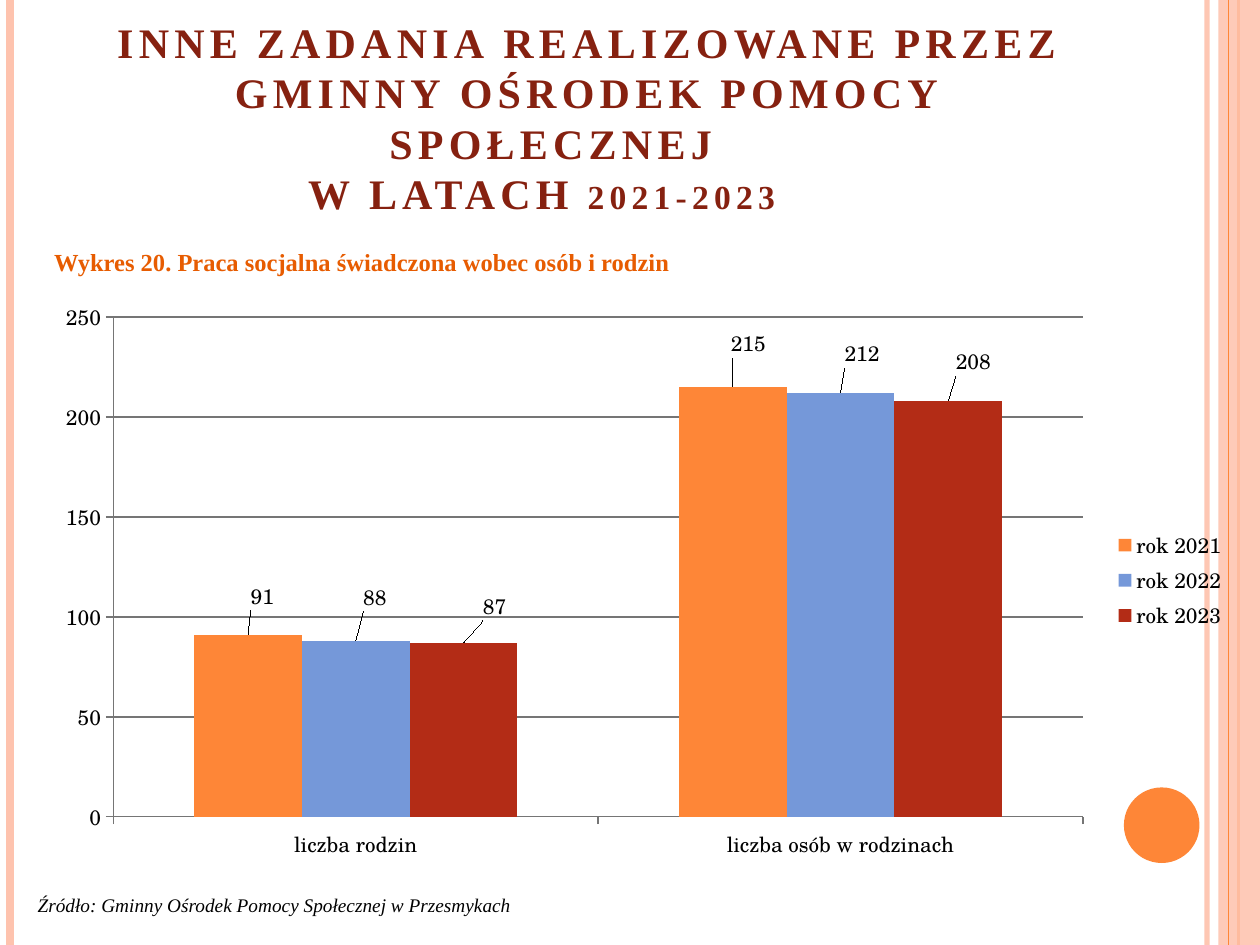
"""Build the slide on social work provided to persons and families."""
from typing import NamedTuple

import pptx
import pptx.chart.data
import pptx.dml.color
import pptx.enum.chart
import pptx.enum.shapes
import pptx.enum.text
import pptx.oxml
import pptx.oxml.ns
import pptx.util

RGBColor = pptx.dml.color.RGBColor
Pt = pptx.util.Pt
PALE = RGBColor(0xFE, 0xC3, 0xAE)
ORANGE = RGBColor(0xFE, 0x86, 0x37)
BLUE = RGBColor(0x75, 0x98, 0xD9)
RED = RGBColor(0xB3, 0x2C, 0x16)
MAROON = RGBColor(0x86, 0x21, 0x10)
CAPTION = RGBColor(0xE7, 0x5C, 0x01)
GRAY = RGBColor(0x75, 0x75, 0x75)
BLACK = RGBColor(0, 0, 0)
SERIF = "Times New Roman"
CHART_FONT = "TeX Gyre Schola"

WIDTH = pptx.util.Inches(10)
HEIGHT = pptx.util.Inches(7.5)
COL = WIDTH / 100
ROW = HEIGHT / 100


class Box(NamedTuple):
    """A frame in percent of the slide's width and height."""

    left: float
    top: float
    width: float
    height: float

    def emu(self) -> tuple:
        """Return left, top, width and height in EMU."""
        return (int(self.left * COL), int(self.top * ROW),
                int(self.width * COL), int(self.height * ROW))


class Stripe(NamedTuple):
    """A full-height vertical line."""

    col: float
    color: RGBColor
    weight: float
    opacity: int = 100


class Block(NamedTuple):
    """A filled decorative shape."""

    kind: int
    box: Box
    color: RGBColor
    opacity: int = 100


class Year(NamedTuple):
    """A chart series with label shifts in percent of the chart."""

    name: str
    values: tuple
    color: RGBColor
    shifts: tuple


SHAPE = pptx.enum.shapes.MSO_SHAPE
DECOR = (
    Stripe(95.8, PALE, 3, 93),
    Stripe(0.8, PALE, 4.5),
    Stripe(98.3, ORANGE, 1.5),
    Block(SHAPE.RECTANGLE, Box(96.7, 0, 3.3, 100), PALE, 87),
    Stripe(97.5, ORANGE, 0.75),
    Block(SHAPE.OVAL, Box(89.2, 83.33, 6, 8), ORANGE),
)
CATEGORIES = ("liczba rodzin", "liczba osób w rodzinach")
YEARS = (
    Year("rok 2021", (91, 215), ORANGE, ((1.2, -3.3), (1.3, -4.1))),
    Year("rok 2022", (88, 212), BLUE, ((1.6, -4.1), (1.8, -3.4))),
    Year("rok 2023", (87, 208), RED, ((2.6, -2.9), (2.1, -3.4))),
)
TITLE = ("INNE ZADANIA REALIZOWANE PRZEZ GMINNY OŚRODEK POMOCY "
         "SPOŁECZNEJ \vW LATACH 2021-2023")


def set_opacity(fill, opacity: int) -> None:
    """Give a solid fill's colour an alpha value."""
    if opacity < 100:
        color = fill._xPr.find(".//" + pptx.oxml.ns.qn("a:srgbClr"))
        pptx.oxml.ns.qn("a:alpha")
        color.append(pptx.oxml.parse_xml(
            f'<a:alpha {pptx.oxml.ns.nsdecls("a")} val="{opacity * 1000}"/>'))


def draw_stripe(s, stripe: Stripe) -> None:
    """Draw one vertical line."""
    x = int(stripe.col * COL)
    c = s.shapes.add_connector(
        pptx.enum.shapes.MSO_CONNECTOR.STRAIGHT, x, 0, x, HEIGHT)
    c.line.width = Pt(stripe.weight)
    c.line.color.rgb = stripe.color
    set_opacity(c.line.fill, stripe.opacity)
    c._element.spPr.append(pptx.oxml.parse_xml(
        f'<a:effectLst {pptx.oxml.ns.nsdecls("a")}/>'))


def draw_block(s, block: Block) -> None:
    """Draw one filled shape."""
    sp = s.shapes.add_shape(block.kind, *block.box.emu())
    sp.shadow.inherit = False
    sp.fill.solid()
    sp.fill.fore_color.rgb = block.color
    set_opacity(sp.fill, block.opacity)
    sp.line.fill.background()


def fill_text(sp, box: Box, text: str, size: float, color: RGBColor):
    """Place a text shape, write its paragraph and return the paragraph."""
    sp.left, sp.top, sp.width, sp.height = box.emu()
    tf = sp.text_frame
    tf.word_wrap = True
    tf.auto_size = pptx.enum.text.MSO_AUTO_SIZE.NONE
    p = tf.paragraphs[0]
    p.text = text
    for r in p.runs:
        r.font.name = SERIF
        r.font.size = Pt(size)
        r.font.color.rgb = color
    return p


def manual_layout(x: float, y: float, inner: str = "", size: str = ""):
    """Return a chart layout element from percent values."""
    return pptx.oxml.parse_xml(
        f'<c:layout {pptx.oxml.ns.nsdecls("c")}><c:manualLayout>{inner}'
        f'<c:x val="{x / 100}"/><c:y val="{y / 100}"/>{size}'
        '</c:manualLayout></c:layout>')


def draw_year(series, year: Year) -> None:
    """Colour a series and shift its value labels."""
    series.format.fill.solid()
    series.format.fill.fore_color.rgb = year.color
    series.data_labels.show_value = True
    series.data_labels.font.size = Pt(12)
    for i, shift in enumerate(year.shifts):
        label = series.points[i].data_label
        label.font.size = Pt(12)
        label.position = pptx.enum.chart.XL_LABEL_POSITION.OUTSIDE_END
        idx = series._element.xpath(f'.//c:dLbl/c:idx[@val="{i}"]')[0]
        idx.addnext(manual_layout(*shift))


def draw_chart(s, box: Box) -> None:
    """Draw the clustered column chart."""
    data = pptx.chart.data.CategoryChartData()
    data.categories = CATEGORIES
    for year in YEARS:
        data.add_series(year.name, year.values)
    chart = s.shapes.add_chart(
        pptx.enum.chart.XL_CHART_TYPE.COLUMN_CLUSTERED, *box.emu(), data).chart
    chart.font.name = CHART_FONT
    chart.font.size = Pt(18)
    chart.font.color.rgb = BLACK
    chart.has_title = False
    chart.has_legend = True
    chart.legend.position = pptx.enum.chart.XL_LEGEND_POSITION.RIGHT
    chart.legend.include_in_layout = False
    chart.legend.font.size = Pt(12)
    plot = chart.plots[0]
    plot.gap_width = 150
    plot.overlap = 0
    plot.vary_by_categories = False
    for series, year in zip(plot.series, YEARS):
        draw_year(series, year)
    value_axis = chart.value_axis
    value_axis.minimum_scale, value_axis.maximum_scale = 0, 250
    value_axis.major_unit = 50
    value_axis.has_major_gridlines = True
    for axis in (chart.category_axis, value_axis):
        axis.major_tick_mark = pptx.enum.chart.XL_TICK_MARK.OUTSIDE
        axis.tick_labels.font.size = Pt(12)
    for part in (chart.category_axis, value_axis, value_axis.major_gridlines):
        part.format.line.color.rgb = GRAY
        part.format.line.width = Pt(1)
    area = chart._chartSpace.xpath(".//c:plotArea")[0]
    for old in area.xpath("./c:layout"):
        area.remove(old)
    area.insert(0, manual_layout(
        6, 4.7, '<c:layoutTarget val="inner"/><c:xMode val="edge"/>'
        '<c:yMode val="edge"/>', '<c:w val="0.81"/><c:h val="0.86"/>'))


def main() -> None:
    """Build and save the presentation."""
    prs = pptx.Presentation()
    prs.slide_width, prs.slide_height = WIDTH, HEIGHT
    s = prs.slides.add_slide(prs.slide_layouts[1])
    title, body = s.shapes.title, s.placeholders[1]
    for item in DECOR:
        draw = draw_stripe if isinstance(item, Stripe) else draw_block
        draw(s, item)
    for sp in (title, body):
        s.shapes._spTree.append(sp._element)

    p = fill_text(title, Box(5.9, 7.07, 81.7, 16.67), TITLE, 24, MAROON)
    title.text_frame.vertical_anchor = pptx.enum.text.MSO_ANCHOR.BOTTOM
    p.alignment = pptx.enum.text.PP_ALIGN.CENTER
    for r in p.runs:
        r.font.bold = True
        r.font._element.set("spc", "300")
        r.font._element.set("cap", "small")

    p = fill_text(body, Box(3.3, 25.47, 94.7, 6.53),
                  "Wykres 20. Praca socjalna świadczona wobec osób i rodzin",
                  14, CAPTION)
    pPr = p._p.get_or_add_pPr()
    pPr.set("marL", str(pptx.util.Inches(0.3)))
    pPr.set("indent", str(pptx.util.Inches(-0.3)))
    pPr.append(pptx.oxml.parse_xml(
        f'<a:buNone {pptx.oxml.ns.nsdecls("a")}/>'))
    p.space_before = Pt(0)
    p.runs[0].font.bold = True

    draw_chart(s, Box(3.3, 30.67, 95, 61.47))
    p = fill_text(s.shapes.add_textbox(0, 0, 0, 0), Box(2, 93.87, 50, 3.87),
                  "Źródło: Gminny Ośrodek Pomocy Społecznej w Przesmykach",
                  11, BLACK)
    p.runs[0].font.italic = True
    prs.save("out.pptx")


if __name__ == "__main__":
    main()
